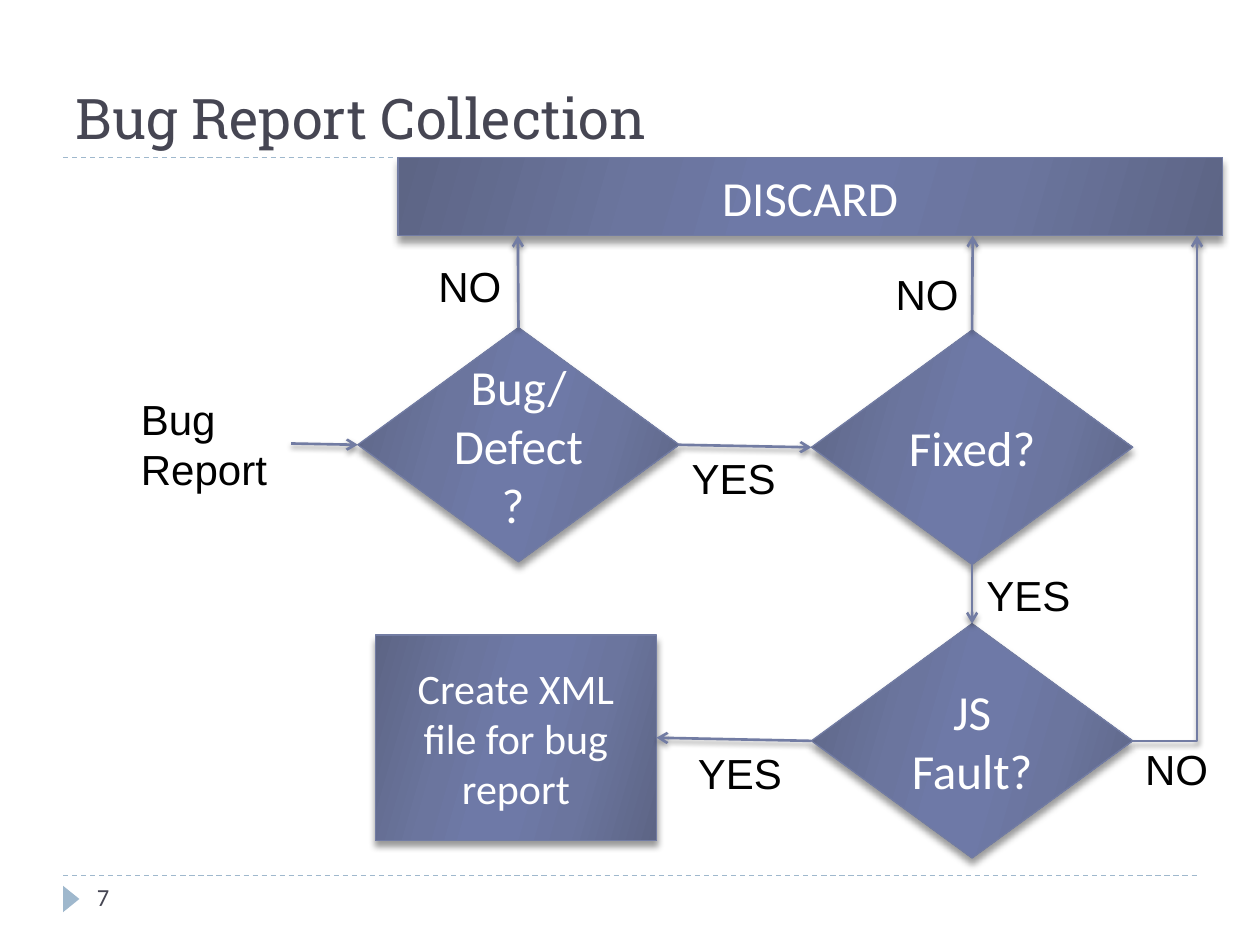
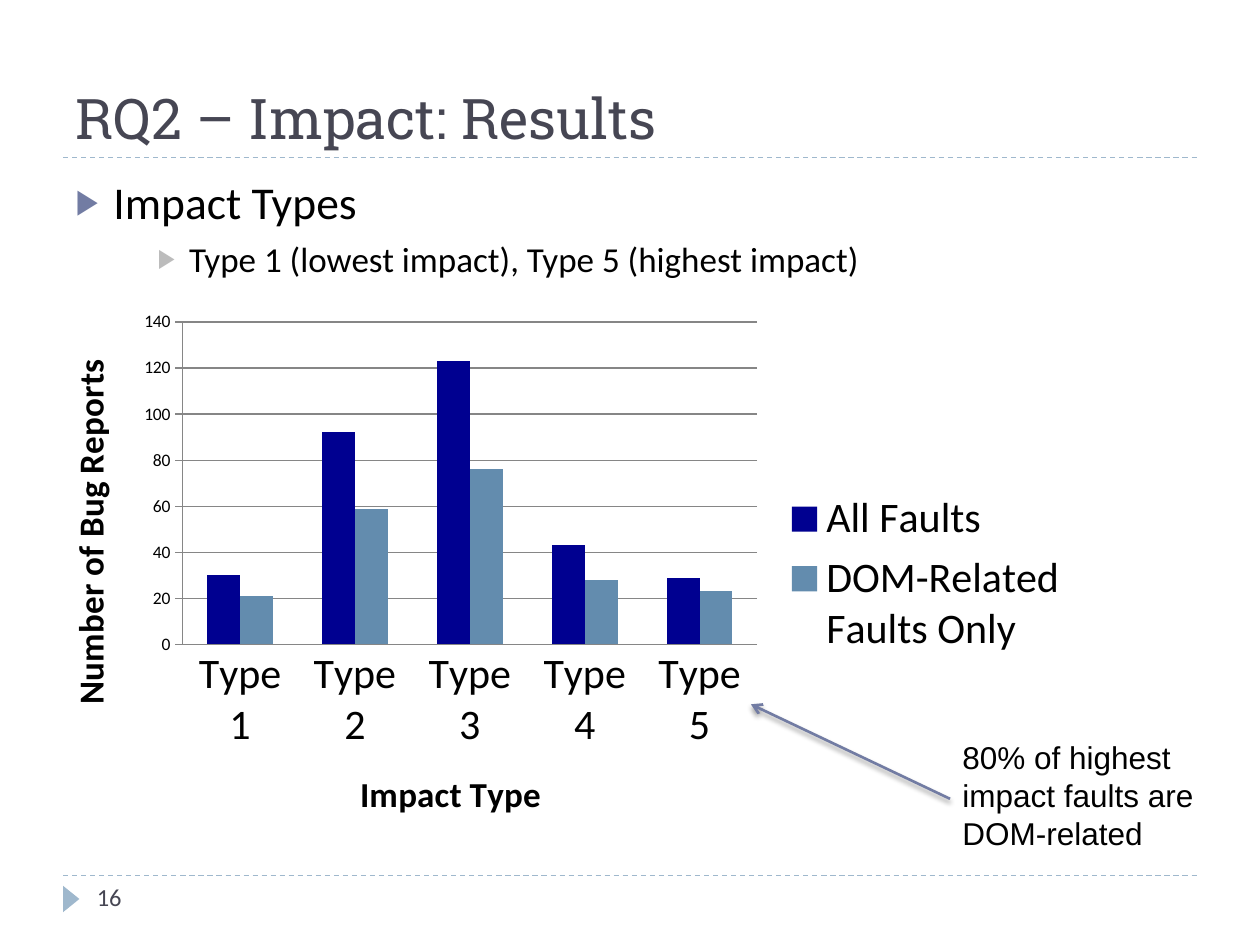
from lxml.etree import SubElement
from pptx import Presentation
from pptx.chart.data import CategoryChartData
from pptx.dml.color import RGBColor
from pptx.enum.chart import XL_CHART_TYPE, XL_LEGEND_POSITION, XL_TICK_MARK
from pptx.enum.dml import MSO_LINE
from pptx.enum.shapes import MSO_CONNECTOR, MSO_SHAPE
from pptx.enum.text import MSO_ANCHOR, MSO_AUTO_SIZE, PP_ALIGN
from pptx.oxml.ns import qn
from pptx.util import Pt

PX = 9144  # 100 px to the inch
TOP, LEFT, BOTTOM, RIGHT = range(4)

WHITE = RGBColor(0xFF, 0xFF, 0xFF)
BLACK = RGBColor(0x00, 0x00, 0x00)
INK = RGBColor(0x46, 0x46, 0x53)
PALE = RGBColor(0x9F, 0xB8, 0xCD)
ACCENT = RGBColor(0x72, 0x7C, 0xA3)
SILVER = RGBColor(0xBC, 0xBC, 0xBC)
GRID = RGBColor(0x86, 0x86, 0x86)
NAVY = RGBColor(0x00, 0x00, 0x90)
STEEL = RGBColor(0x63, 0x8C, 0xAE)
EDGE = RGBColor(0x5D, 0x65, 0x85)
MIDDLE = RGBColor(0x6B, 0x75, 0x9E)
CORE = RGBColor(0x6E, 0x79, 0xA7)
SHEEN = [(0, EDGE), (30, MIDDLE), (45, CORE), (55, CORE), (73, MIDDLE), (100, EDGE)]

HEAD_FONT, BODY_FONT, LABEL_FONT = "Roboto Slab", "Calibri", "Arial"


def emu(*lengths):
    return [n * PX for n in lengths]


def node(parent, tag, **attrs):
    return SubElement(parent, qn(tag), {k: str(v) for k, v in attrs.items()})


class Deck:
    def __init__(self):
        self.prs = Presentation()
        self.prs.slide_width, self.prs.slide_height = emu(1000, 750)
        self.s = None

    # Shared frame: title, dashed rules, marker and page number
    def slide(self, layout, title, number):
        self.s = self.prs.slides.add_slide(self.prs.slide_layouts[layout])
        for y in (695, 125):
            rule = self.line((50, y), (950, y), PALE, 0.75)
            rule.line.dash_style = MSO_LINE.DASH
        marker = self.s.shapes.add_shape(MSO_SHAPE.ISOSCELES_TRIANGLE, *emu(46, 707, 21, 13))
        marker.rotation = 90
        marker.shadow.inherit = False
        marker.fill.solid()
        marker.fill.fore_color.rgb = PALE
        marker.line.fill.background()
        tf = self.place(self.s.shapes.title, (50, 17, 900, 108))
        tf.vertical_anchor = MSO_ANCHOR.BOTTOM
        self.run(tf.paragraphs[0], title, 32, HEAD_FONT, INK, PP_ALIGN.LEFT)
        self.label(number, (67, 695, 217, 40), 14, BODY_FONT, INK)

    def place(self, sp, box):
        sp.left, sp.top, sp.width, sp.height = emu(*box)
        tf = sp.text_frame
        tf.word_wrap = True
        tf.auto_size = MSO_AUTO_SIZE.NONE
        return tf

    def run(self, p, text, size, font, color, align=None):
        p.alignment = align
        r = p.add_run()
        r.text = text
        self.font(r.font, size, color, font)

    def font(self, f, size, color=BLACK, name=BODY_FONT, bold=False):
        f.size, f.name, f.bold = Pt(size), name, bold
        f.color.rgb = color

    def label(self, text, box, size=24, font=LABEL_FONT, color=BLACK, wrap=True):
        tf = self.s.shapes.add_textbox(*emu(*box)).text_frame
        tf.word_wrap = wrap
        self.run(tf.paragraphs[0], text, size, font, color)

    def answer(self, text, x, y):
        self.label(text, (x, y, 71 if text == "NO" else 88, 50), wrap=False)

    # Bullets given as (text, level, size, indent, hang, space before, colour)
    def bullets(self, box, items):
        tf = self.place(self.s.placeholders[1], box)
        for i, (text, level, size, indent, hang, before, color) in enumerate(items):
            p = tf.add_paragraph() if i else tf.paragraphs[0]
            p.level = level
            p.space_before = Pt(before)
            self.run(p, text, size, BODY_FONT, BLACK)
            pPr = p._p.get_or_add_pPr()
            pPr.set("marL", str(indent * PX))
            pPr.set("indent", str(-hang * PX))
            node(node(pPr, "a:buClr"), "a:srgbClr", val=color)
            node(pPr, "a:buSzPct", val=76000)
            node(pPr, "a:buChar", char="▶")

    def shadow(self, effects, blur, dist):
        shade = node(effects, "a:outerShdw", blurRad=Pt(blur), dist=Pt(dist),
                     dir=5400000, rotWithShape=0)
        node(node(shade, "a:srgbClr", val=BLACK), "a:alpha", val=40000)

    # Flowchart box with sheen and shadow
    def box(self, kind, text, box, size=28):
        sp = self.s.shapes.add_shape(kind, *emu(*box))
        sp.fill.gradient()
        sp.fill.gradient_angle = 344
        sp.line.color.rgb = ACCENT
        sp.line.width = Pt(0.75)
        spPr = sp._element.spPr
        stops = spPr.find(".//" + qn("a:gsLst"))
        for old in list(stops):
            stops.remove(old)
        for pos, color in SHEEN:
            node(node(stops, "a:gs", pos=pos * 1000), "a:srgbClr", val=color)
        sp.shadow.inherit = False
        self.shadow(spPr.find(qn("a:effectLst")), 4, 3.4)
        tf = sp.text_frame
        tf.word_wrap = True
        tf.vertical_anchor = MSO_ANCHOR.MIDDLE
        self.run(tf.paragraphs[0], text, size, BODY_FONT, WHITE, PP_ALIGN.CENTER)
        return sp

    def line(self, start, end, color, width, kind=MSO_CONNECTOR.STRAIGHT):
        c = self.s.shapes.add_connector(kind, *emu(*start, *end))
        c.line.color.rgb = color
        c.line.width = Pt(width)
        node(c._element.spPr, "a:effectLst")
        return c

    # Arrow; begin and end are optional (shape, side) joints
    def arrow(self, start, end, begin=None, finish=None, bent=False):
        kind = MSO_CONNECTOR.ELBOW if bent else MSO_CONNECTOR.STRAIGHT
        c = self.line(start, end, ACCENT, 1.5, kind)
        spPr = c._element.spPr
        node(spPr.find(qn("a:ln")), "a:tailEnd", type="arrow")
        self.shadow(spPr.find(qn("a:effectLst")), 3, 2)
        if bent:
            spPr.find(qn("a:prstGeom")).set("prst", "bentConnector2")
        if begin:
            c.begin_connect(*begin)
        if finish:
            c.end_connect(*finish)

    def axis_title(self, axis, text):
        tf = axis.axis_title.text_frame
        r = tf.paragraphs[0].add_run()
        r.text = text
        self.font(r.font, 20, bold=True)
        return tf

    def columns(self, box, cats, series, cat_title, val_title):
        data = CategoryChartData()
        data.categories = cats
        for name, values, _ in series:
            data.add_series(name, values)
        chart = self.s.shapes.add_chart(XL_CHART_TYPE.COLUMN_CLUSTERED, *emu(*box), data).chart
        chart.has_title = False
        self.font(chart.font, 10)
        plot = chart.plots[0]
        plot.gap_width, plot.overlap, plot.vary_by_categories = 150, 0, False
        for ser, (_, _, color) in zip(plot.series, series):
            ser.format.fill.solid()
            ser.format.fill.fore_color.rgb = color
        cat, val = chart.category_axis, chart.value_axis
        cat.major_tick_mark = XL_TICK_MARK.NONE
        self.font(cat.tick_labels.font, 24)
        val.major_tick_mark = XL_TICK_MARK.OUTSIDE
        val.minimum_scale, val.maximum_scale, val.major_unit = 0, 140, 20
        for part in (cat, val, val.major_gridlines):
            part.format.line.color.rgb = GRID
            part.format.line.width = Pt(0.75)
        self.axis_title(cat, cat_title)
        upright = self.axis_title(val, val_title)._txBody.bodyPr
        upright.set("rot", "-5400000")
        upright.set("vert", "horz")
        chart.has_legend = True
        chart.legend.position = XL_LEGEND_POSITION.RIGHT
        chart.legend.include_in_layout = False
        self.font(chart.legend.font, 24)


def bug_report_slide(deck):
    deck.slide(5, "Bug Report Collection", "7")
    decision, process = MSO_SHAPE.FLOWCHART_DECISION, MSO_SHAPE.FLOWCHART_PROCESS

    # Steps
    deck.box(process, "DISCARD", (316, 125, 654, 62))
    bug = deck.box(decision, "Bug/Defect? ", (284, 260, 255, 186))
    fixed = deck.box(decision, "Fixed? ", (644, 262, 255, 186))
    fault = deck.box(decision, "JS Fault?", (644, 495, 255, 186))
    create = deck.box(process, "Create XML file for bug report", (298, 504, 223, 163), 24)
    deck.label("Bug Report", (102, 307, 153, 91))

    # Flow
    deck.arrow((231, 352), (284, 353), finish=(bug, LEFT))
    deck.arrow((411, 260), (411, 187), (bug, TOP))
    deck.arrow((539, 353), (644, 355), (bug, RIGHT), (fixed, LEFT))
    deck.arrow((771, 262), (772, 187), (fixed, TOP))
    deck.arrow((771, 448), (771, 495), (fixed, BOTTOM), (fault, TOP))
    deck.arrow((644, 588), (521, 585), (fault, LEFT), (create, RIGHT))
    deck.arrow((899, 588), (950, 187), bent=True)

    # Answers
    for x, y in ((338, 202), (701, 208), (899, 585)):
        deck.answer("NO", x, y)
    for x, y in ((539, 354), (773, 447), (544, 588)):
        deck.answer("YES", x, y)


def impact_slide(deck):
    deck.slide(1, "RQ2 – Impact: Results", "16")
    deck.bullets((50, 133, 900, 540), [
        ("Impact Types", 0, 26, 30, 30, 6, ACCENT),
        ("Type 1 (lowest impact), Type 5 (highest impact)", 2, 20, 90, 25, 5, SILVER),
    ])
    deck.columns((29, 239, 831, 434), [f"Type {n}" for n in range(1, 6)], [
        ("All Faults", (30, 92, 123, 43, 29), NAVY),
        ("DOM-Related Faults Only", (21, 59, 76, 28, 23), STEEL),
    ], "Impact Type", "Number of Bug Reports")

    # Callout
    deck.arrow((754, 634), (596, 559))
    deck.label("80% of highest impact faults are DOM-related", (754, 581, 214, 101), 18)


def main():
    deck = Deck()
    bug_report_slide(deck)
    impact_slide(deck)
    deck.prs.save("out.pptx")


if __name__ == "__main__":
    main()
